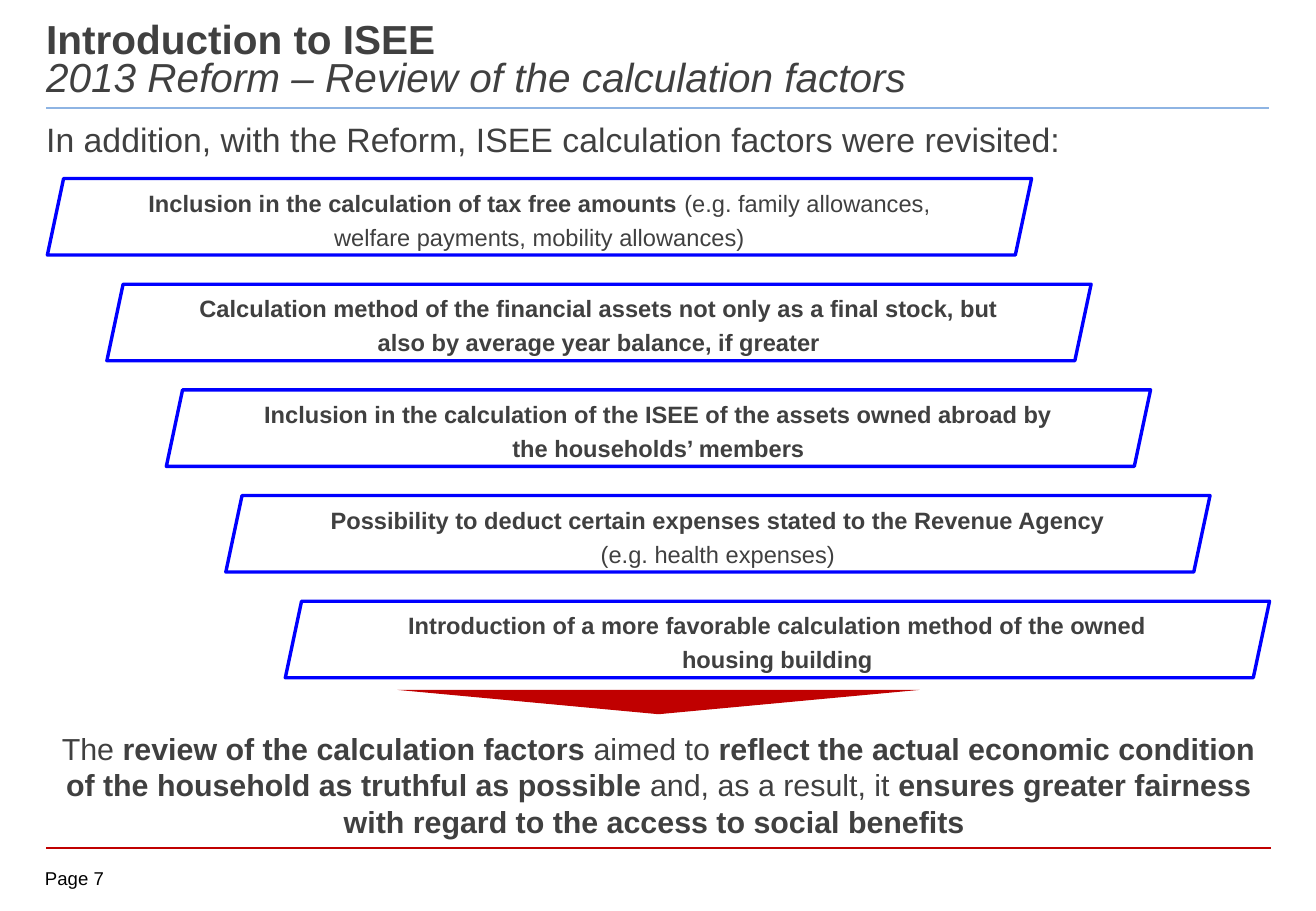
import lxml.etree
import pptx
import pptx.dml.color
import pptx.enum.shapes
import pptx.enum.text
import pptx.oxml.ns
import pptx.util

RGBColor = pptx.dml.color.RGBColor
Shape = pptx.enum.shapes.MSO_SHAPE
Align = pptx.enum.text.PP_ALIGN
Anchor = pptx.enum.text.MSO_ANCHOR

INK = RGBColor(0x40, 0x40, 0x40)
BLACK = RGBColor(0, 0, 0)
WHITE = RGBColor(0xFF, 0xFF, 0xFF)
BLUE = RGBColor(0, 0, 0xFF)
PALE_BLUE = RGBColor(0x8E, 0xB4, 0xE3)
RED = RGBColor(0xC0, 0, 0)

LEFT, WIDTH = 3.51, 93.07  # content column, in percent of the slide width

FACTORS = [
    "**Inclusion in the calculation of tax free amounts **"
    "(e.g. family allowances, welfare payments, mobility allowances)",
    "**Calculation method of the financial assets not only as a final stock, "
    "but also by average year balance, if greater**",
    "**Inclusion in the calculation of the ISEE of the assets owned abroad by "
    "the households’ members**",
    "**Possibility to deduct certain expenses stated to the Revenue Agency **"
    "(e.g. health expenses)",
    "**Introduction of a more favorable calculation method of the owned "
    "housing building**",
]
CONCLUSION = (
    "The **review of the calculation factors **aimed to **reflect the actual "
    "economic condition of the household as truthful as possible **and, as a "
    "result, it **ensures greater fairness with regard to the access to social "
    "benefits **"
)


def write_text(paragraph, text, size, color=INK, align=Align.LEFT,
               spacing=1.0, italic=False, font="Arial"):
    """Fill a paragraph; stretches between ** marks are bold."""
    paragraph.alignment = align
    paragraph.line_spacing = spacing
    for index, part in enumerate(text.split("**")):
        if part:
            run = paragraph.add_run()
            run.text = part
            run.font.name = font
            run.font.size = pptx.util.Pt(size)
            run.font.bold = index % 2 == 1
            run.font.italic = italic
            run.font.color.rgb = color


class Deck:
    """Slide builder; every length is a percentage of the slide's size."""

    def __init__(self, width, height):
        self.presentation = pptx.Presentation()
        self.presentation.slide_width = pptx.util.Inches(width)
        self.presentation.slide_height = pptx.util.Inches(height)
        self.slide = self.presentation.slides.add_slide(
            self.presentation.slide_layouts[6])

    def place(self, *lengths):
        """Turn alternating x and y percentages into slide lengths."""
        sides = (self.presentation.slide_width, self.presentation.slide_height)
        return [pptx.util.Emu(round(sides[i % 2] * length / 100))
                for i, length in enumerate(lengths)]

    def prepare_frame(self, frame, anchor=Anchor.TOP):
        frame.margin_left = frame.margin_right = 0
        frame.margin_top = frame.margin_bottom = 0
        frame.word_wrap = True
        frame.vertical_anchor = anchor
        return frame

    def text(self, box, *lines):
        """Add a text box; each line is a dict of write_text arguments."""
        frame = self.prepare_frame(
            self.slide.shapes.add_textbox(*self.place(*box)).text_frame)
        for index, line in enumerate(lines):
            paragraph = frame.add_paragraph() if index else frame.paragraphs[0]
            write_text(paragraph, **line)

    def shape(self, kind, box, fill, outline=None):
        shape = self.slide.shapes.add_shape(kind, *self.place(*box))
        shape.shadow.inherit = False
        shape.fill.solid()
        shape.fill.fore_color.rgb = fill
        if outline is None:
            shape.line.fill.background()
        else:
            shape.line.color.rgb = outline
            shape.line.width = pptx.util.Pt(2)
        return shape

    def factor(self, box, text):
        band = self.shape(Shape.PARALLELOGRAM, box, WHITE, BLUE)
        band.adjustments[0] = 0.212
        frame = self.prepare_frame(band.text_frame, Anchor.MIDDLE)
        write_text(frame.paragraphs[0], text, 14,
                   align=Align.CENTER, spacing=1.2)

    def rule(self, y, right, color, weight):
        rule = self.slide.shapes.add_connector(
            pptx.enum.shapes.MSO_CONNECTOR.STRAIGHT,
            *self.place(LEFT, y, right, y))
        rule.line.color.rgb = color
        rule.line.width = pptx.util.Pt(weight)
        lxml.etree.SubElement(rule._element.spPr,
                              pptx.oxml.ns.qn("a:effectLst"))


def main():
    deck = Deck(10.83, 7.5)
    deck.rule(93.07, 96.58, RED, 1)
    deck.rule(11.87, 96.4, PALE_BLUE, 1.5)
    deck.text((3.42, 95.2, 6.74, 2.93),
              dict(text="Page 7", size=11, color=BLACK))
    heading = dict(size=24, align=Align.JUSTIFY, spacing=0.8)
    deck.text((LEFT, 2.53, 71.28, 9.47),
              dict(text="**Introduction to ISEE**", **heading),
              dict(text="2013 Reform – Review of the calculation factors",
                   italic=True, **heading))
    deck.text((LEFT, 80.13, WIDTH, 12.13),
              dict(text=CONCLUSION, size=18, align=Align.CENTER))
    deck.text((LEFT, 13.07, WIDTH, 9.6),
              dict(text="In addition, with the Reform, ISEE calculation "
                        "factors were revisited:",
                   size=20, align=Align.JUSTIFY))
    for step, factor in enumerate(FACTORS):
        deck.factor((3.6 + 4.52 * step, 19.6 + 11.6 * step, 74.79, 8.4), factor)
    pointer = deck.shape(Shape.ISOSCELES_TRIANGLE,
                         (30.19, 75.73, 39.7, 2.67), RED)
    pointer.rotation = 180
    deck.presentation.save("out.pptx")


if __name__ == "__main__":
    main()
